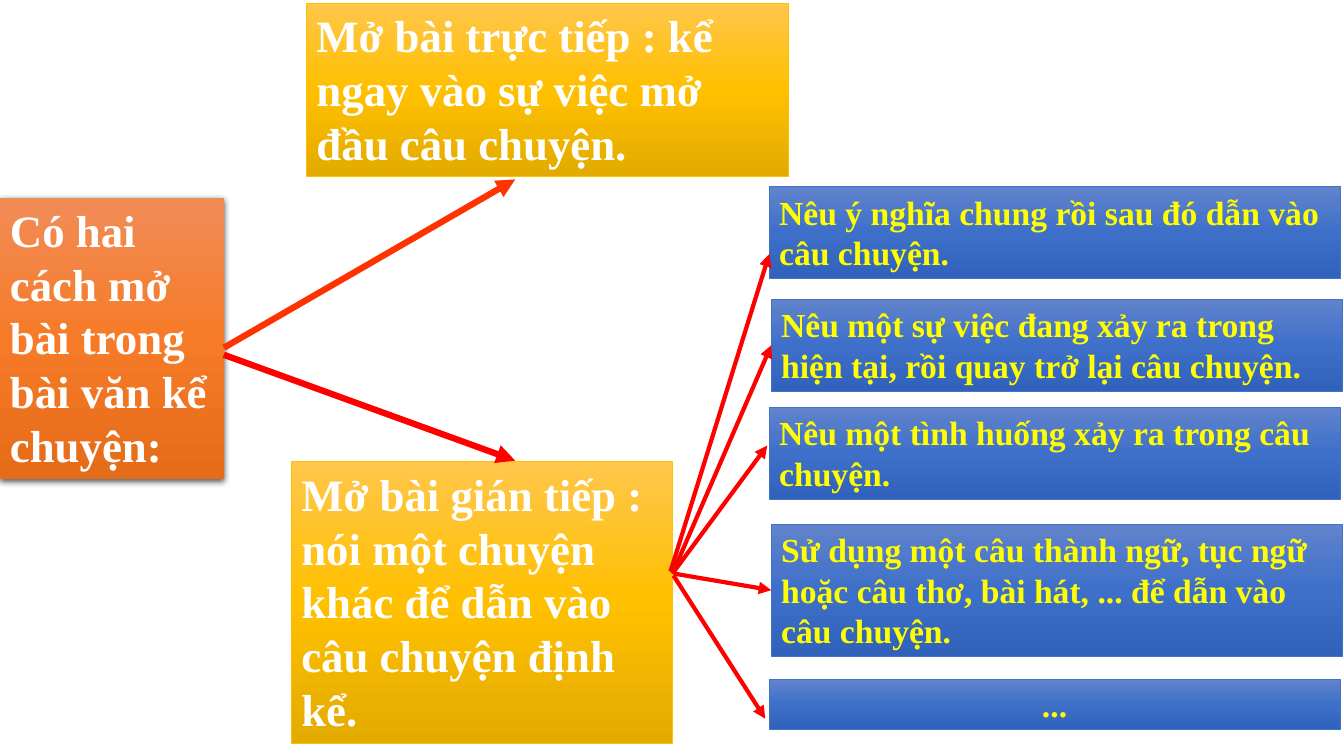
from dataclasses import dataclass

from lxml import etree
from pptx import Presentation
from pptx.dml.color import RGBColor
from pptx.enum.shapes import MSO_CONNECTOR, MSO_SHAPE
from pptx.enum.text import MSO_ANCHOR, MSO_AUTO_SIZE, PP_ALIGN
from pptx.oxml.ns import qn
from pptx.shapes.autoshape import Shape
from pptx.slide import Slide
from pptx.util import Emu, Pt

RECTANGLE = MSO_SHAPE.RECTANGLE
STRAIGHT = MSO_CONNECTOR.STRAIGHT
TOP = MSO_ANCHOR.TOP
GROW = MSO_AUTO_SIZE.SHAPE_TO_FIT_TEXT
LEFT, CENTER = PP_ALIGN.LEFT, PP_ALIGN.CENTER
LEFT_SIDE = 1
EMU_PER_PX = 9144  # 100 px to the inch


@dataclass(frozen=True)
class BoxStyle:
    stops: tuple[str, str, str]
    text_color: str
    size: int
    outline: str | None = None
    shadow: bool = False


@dataclass(frozen=True)
class Theme:
    font: str = "Times New Roman"
    red: str = "FF0000"
    orange_red: str = "FF3300"
    thick: float = 4.5
    thin: float = 3
    outline_width: float = 0.5
    root: BoxStyle = BoxStyle(("F18C57", "F67B28", "E56C19"), "FFFFFF", 32, shadow=True)
    opening: BoxStyle = BoxStyle(("FFC64B", "FFC000", "E3AB00"), "FFFFFF", 32, "FFC000")
    way: BoxStyle = BoxStyle(("6183CB", "3E70CA", "3062BB"), "FFFF00", 24, "4472C4")


THEME = Theme()


@dataclass(frozen=True)
class Box:
    key: str
    left: int
    top: int
    width: int
    height: int
    style: BoxStyle
    text: str
    align: PP_ALIGN = LEFT


@dataclass(frozen=True)
class Arrow:
    start: tuple[int, int]
    end: tuple[int, int]
    color: str = THEME.red
    width: float = THEME.thin
    target: str | None = None  # box joined at the middle of its left side


BOXES = (
    Box("root", 0, 196, 222, 279, THEME.root,
        "Có hai cách mở bài trong bài văn kể chuyện:"),
    Box("direct", 304, 3, 478, 172, THEME.opening,
        "Mở bài trực tiếp : kể ngay vào sự việc mở đầu câu chuyện."),
    Box("indirect", 289, 458, 378, 279, THEME.opening,
        "Mở bài gián tiếp : nói một chuyện khác để dẫn vào câu chuyện định kể."),
    Box("meaning", 763, 185, 566, 91, THEME.way,
        "Nêu ý nghĩa chung rồi sau đó dẫn vào câu chuyện."),
    Box("event", 765, 297, 566, 91, THEME.way,
        "Nêu một sự việc đang xảy ra trong hiện tại, rồi quay trở lại câu chuyện."),
    Box("situation", 763, 404, 566, 91, THEME.way,
        "Nêu một tình huống xảy ra trong câu chuyện."),
    Box("proverb", 765, 520, 566, 131, THEME.way,
        "Sử dụng một câu thành ngữ, tục ngữ hoặc câu thơ, bài hát, ... để dẫn vào câu chuyện."),
    Box("others", 763, 674, 566, 50, THEME.way, "...", CENTER),
)

ARROWS = (
    Arrow((222, 345), (511, 178), THEME.orange_red, THEME.thick),
    Arrow((222, 352), (511, 457), THEME.red, THEME.thick),
    Arrow((665, 567), (763, 252)),
    Arrow((667, 569), (765, 338), target="event"),
    Arrow((667, 569), (761, 442)),
    Arrow((668, 569), (762, 587), target="proverb"),
    Arrow((668, 571), (759, 713)),
)


def px(length: int) -> Emu:
    return Emu(length * EMU_PER_PX)


def add_color(parent: etree._Element, color: str) -> etree._Element:
    return etree.SubElement(parent, qn("a:srgbClr"), val=color)


def fill_gradient(shape: Shape, colors: tuple[str, str, str]) -> None:
    shape.fill.gradient()
    shape.fill.gradient_angle = 270
    stop_list = shape._element.spPr.find(qn("a:gradFill")).find(qn("a:gsLst"))
    for stop in list(stop_list):
        stop_list.remove(stop)
    for index, color in enumerate(colors):
        add_color(etree.SubElement(stop_list, qn("a:gs"), pos=str(index * 50000)), color)


def add_shadow(shape: Shape) -> None:
    effects = shape._element.spPr.find(qn("a:effectLst"))
    shadow = etree.SubElement(
        effects, qn("a:outerShdw"), blurRad=str(Pt(4.5)), dist=str(Pt(1.5)),
        dir="5400000", algn="ctr", rotWithShape="0")
    etree.SubElement(add_color(shadow, "000000"), qn("a:alpha"), val="63000")


def write_text(shape: Shape, text: str, *, size: int, color: str, align: PP_ALIGN) -> None:
    frame = shape.text_frame
    frame.word_wrap = True
    frame.auto_size = GROW
    frame.vertical_anchor = TOP
    paragraph = frame.paragraphs[0]
    paragraph.alignment = align
    run = paragraph.add_run()
    run.text = text
    run.font.name = THEME.font
    run.font.size = Pt(size)
    run.font.bold = True
    run.font.color.rgb = RGBColor.from_string(color)


def draw_box(slide: Slide, box: Box) -> Shape:
    style = box.style
    shape = slide.shapes.add_shape(
        RECTANGLE, px(box.left), px(box.top), px(box.width), px(box.height))
    fill_gradient(shape, style.stops)
    if style.outline:
        shape.line.color.rgb = RGBColor.from_string(style.outline)
        shape.line.width = Pt(THEME.outline_width)
    else:
        shape.line.fill.background()
    shape.shadow.inherit = False
    if style.shadow:
        add_shadow(shape)
    write_text(shape, box.text, size=style.size, color=style.text_color, align=box.align)
    return shape


def draw_arrow(slide: Slide, arrow: Arrow, shapes: dict[str, Shape]) -> None:
    connector = slide.shapes.add_connector(
        STRAIGHT, *(px(value) for value in arrow.start + arrow.end))
    if arrow.target:
        connector.end_connect(shapes[arrow.target], LEFT_SIDE)
    connector.line.color.rgb = RGBColor.from_string(arrow.color)
    connector.line.width = Pt(arrow.width)
    etree.SubElement(connector.line._get_or_add_ln(), qn("a:tailEnd"), type="triangle")
    etree.SubElement(connector._element.spPr, qn("a:effectLst"))


def main() -> None:
    presentation = Presentation()
    presentation.slide_width, presentation.slide_height = px(1333), px(750)
    slide = presentation.slides.add_slide(presentation.slide_layouts[6])

    # Boxes: the root, the two kinds of opening, the indirect ways
    shapes = {box.key: draw_box(slide, box) for box in BOXES}

    # Arrows from the root and from the indirect opening
    for arrow in ARROWS:
        draw_arrow(slide, arrow, shapes)

    presentation.save("out.pptx")


if __name__ == "__main__":
    main()
